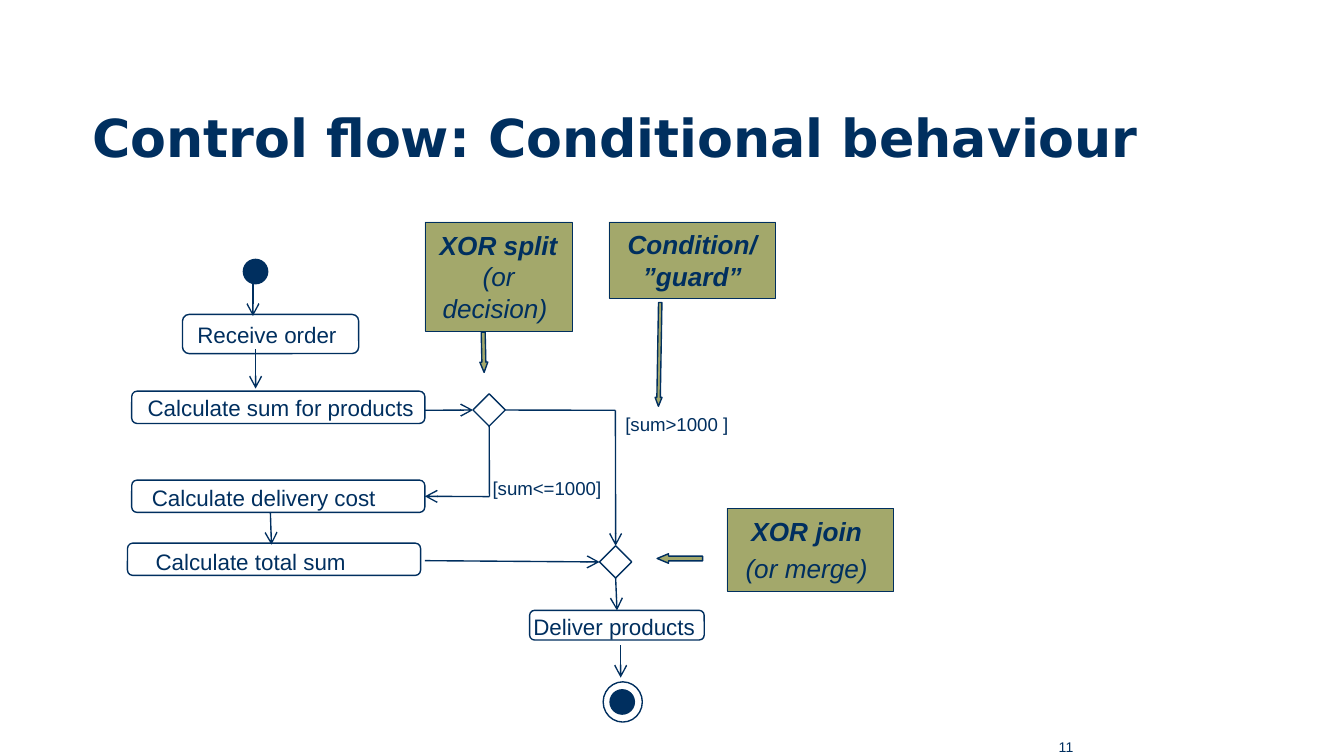
from pptx import Presentation
from pptx.dml.color import RGBColor
from pptx.enum.shapes import MSO_CONNECTOR, MSO_SHAPE
from pptx.enum.text import MSO_ANCHOR, PP_ALIGN
from pptx.oxml.ns import qn
from pptx.util import Cm, Pt
from lxml import etree

NAVY = RGBColor(0x00, 0x2F, 0x5F)
OLIVE = RGBColor(0xA3, 0xA8, 0x6B)
WHITE = RGBColor(0xFF, 0xFF, 0xFF)
ROUNDED = MSO_SHAPE.ROUNDED_RECTANGLE
RECTANGLE = MSO_SHAPE.RECTANGLE
DIAMOND = MSO_SHAPE.DIAMOND
ELLIPSE = MSO_SHAPE.OVAL
LEFT_ARROW = MSO_SHAPE.LEFT_ARROW
RIGHT_ARROW = MSO_SHAPE.RIGHT_ARROW
STRAIGHT = MSO_CONNECTOR.STRAIGHT
CENTER, LEFT = PP_ALIGN.CENTER, PP_ALIGN.LEFT
MIDDLE, TOP = MSO_ANCHOR.MIDDLE, MSO_ANCHOR.TOP
TOP_SIDE, LEFT_SIDE, BOTTOM_SIDE, RIGHT_SIDE = range(4)


class ActivityDiagram:
    """Draws activity diagram elements on one slide, measured in centimetres."""

    def __init__(self, slide, font="Arial", color=NAVY, line_width=0.75):
        self.slide = slide
        self.font = font
        self.color = color
        self.line_width = line_width

    def style_font(self, paragraph, size, bold=None, italic=None, name=None):
        font = paragraph.font
        font.name = name or self.font
        font.size = Pt(size)
        font.color.rgb = self.color
        font.bold = bold
        font.italic = italic

    def shape(self, kind, box, fill=WHITE, line_width=None):
        shape = self.slide.shapes.add_shape(kind, *map(Cm, box))
        shape.shadow.inherit = False
        if fill is None:
            shape.fill.background()
        else:
            shape.fill.solid()
            shape.fill.fore_color.rgb = fill
        shape.line.color.rgb = self.color
        shape.line.width = Pt(line_width or self.line_width)
        return shape

    def text(self, text, box, size, align=LEFT, anchor=TOP, wrap=True,
             spacing=None, bold=None, name=None):
        frame = self.slide.shapes.add_textbox(*map(Cm, box)).text_frame
        frame.word_wrap = wrap
        frame.vertical_anchor = anchor
        paragraph = frame.paragraphs[0]
        paragraph.text = text
        paragraph.alignment = align
        paragraph.line_spacing = spacing
        self.style_font(paragraph, size, bold, name=name)

    def activity(self, text, box, text_box):
        shape = self.shape(ROUNDED, box)
        self.text(text, text_box, 12, spacing=0.6)
        return shape

    def callout(self, paragraphs, box):
        frame = self.shape(RECTANGLE, box, OLIVE, 0.25).text_frame
        frame.word_wrap = True
        frame.vertical_anchor = MIDDLE
        for index, runs in enumerate(paragraphs):
            paragraph = frame.add_paragraph() if index else frame.paragraphs[0]
            paragraph.alignment = CENTER
            if index:
                paragraph.space_before = Pt(2.8)
            self.style_font(paragraph, 14, italic=True)
            for text, bold in runs:
                run = paragraph.add_run()
                run.text = text
                run.font.bold = bold

    def pointer(self, kind, box, head, rotation=0):
        arrow = self.shape(kind, box, OLIVE)
        arrow.adjustments[1] = head
        arrow.rotation = rotation

    def flow(self, start, end, source=None, target=None, arrow=True):
        connector = self.slide.shapes.add_connector(STRAIGHT, *map(Cm, start + end))
        if source:
            connector.begin_connect(*source)
        if target:
            connector.end_connect(*target)
        connector.line.color.rgb = self.color
        connector.line.width = Pt(self.line_width)
        if arrow:
            line = connector.line._get_or_add_ln()
            etree.SubElement(line, qn("a:tailEnd"), type="arrow")
        etree.SubElement(connector._element.spPr, qn("a:effectLst"))


def main():
    presentation = Presentation()
    presentation.slide_width = Cm(25.4)
    presentation.slide_height = Cm(14.28)
    slide = presentation.slides.add_slide(presentation.slide_layouts[6])
    diagram = ActivityDiagram(slide)

    diagram.text("Control flow: Conditional behaviour", (1.5, 1.75, 20.65, 1.65), 28,
                 anchor=MIDDLE, bold=True, name="DejaVu Sans")
    diagram.text("11", (19.76, 13.82, 1.52, 0.46), 7.5)

    diagram.shape(ELLIPSE, (4.6, 4.9, 0.46, 0.46), NAVY)
    diagram.activity("Receive order", (3.45, 5.94, 3.33, 0.74), (3.48, 6.12, 3.33, 0.56))
    diagram.activity("Calculate sum for products",
                     (2.49, 7.39, 5.54, 0.61), (2.54, 7.49, 5.99, 0.56))
    delivery = diagram.activity("Calculate delivery cost",
                                (2.49, 9.07, 5.54, 0.61), (2.62, 9.19, 4.9, 0.56))
    diagram.activity("Calculate total sum",
                     (2.41, 10.26, 5.54, 0.61), (2.69, 10.41, 4.34, 0.56))
    deliver = diagram.activity("Deliver products",
                               (10.01, 11.53, 3.3, 0.56), (9.83, 11.63, 4.34, 0.58))
    decision = diagram.shape(DIAMOND, (8.94, 7.44, 0.61, 0.61))
    merge = diagram.shape(DIAMOND, (11.33, 10.31, 0.61, 0.61))
    diagram.shape(ELLIPSE, (11.53, 13.03, 0.46, 0.46), NAVY)
    diagram.shape(ELLIPSE, (11.4, 12.88, 0.74, 0.76), None)

    diagram.flow((4.78, 5.36), (4.78, 5.97))
    diagram.flow((4.83, 6.6), (4.83, 7.34))
    diagram.flow((8.03, 7.75), (8.94, 7.75), target=(decision, LEFT_SIDE))
    diagram.flow((9.55, 7.75), (11.63, 7.75), source=(decision, RIGHT_SIDE), arrow=False)
    diagram.flow((11.63, 7.75), (11.63, 10.31), target=(merge, TOP_SIDE))
    diagram.flow((9.25, 8.05), (9.25, 9.38), source=(decision, BOTTOM_SIDE), arrow=False)
    diagram.flow((9.25, 9.38), (8.03, 9.38), target=(delivery, RIGHT_SIDE))
    diagram.flow((5.11, 9.68), (5.13, 10.29))
    diagram.flow((8.03, 10.59), (11.33, 10.62), target=(merge, LEFT_SIDE))
    diagram.flow((11.63, 10.92), (11.66, 11.53),
                 source=(merge, BOTTOM_SIDE), target=(deliver, TOP_SIDE))
    diagram.flow((11.73, 12.19), (11.73, 12.8))

    diagram.text("[sum>1000 ]", (11.56, 7.67, 2.46, 0.69), 10, CENTER, wrap=False)
    diagram.text("[sum<=1000]", (8.99, 8.89, 2.69, 0.69), 10, CENTER, wrap=False)

    diagram.pointer(RIGHT_ARROW, (11.48, 6.63, 1.96, 0.13), 1.29, 91)
    diagram.pointer(RIGHT_ARROW, (8.76, 6.58, 0.76, 0.15), 1.29, 88.7)
    diagram.pointer(LEFT_ARROW, (12.42, 10.46, 0.86, 0.18), 1.2)
    diagram.callout([[("XOR split ", True), ("(or decision) ", False)]],
                    (8.03, 4.19, 2.79, 2.06))
    diagram.callout([[("Condition/”guard”", True)]], (11.51, 4.19, 3.15, 1.45))
    diagram.callout([[("XOR join ", True)], [("(or merge) ", False)]],
                    (13.74, 9.6, 3.15, 1.57))

    presentation.save("out.pptx")


if __name__ == "__main__":
    main()
